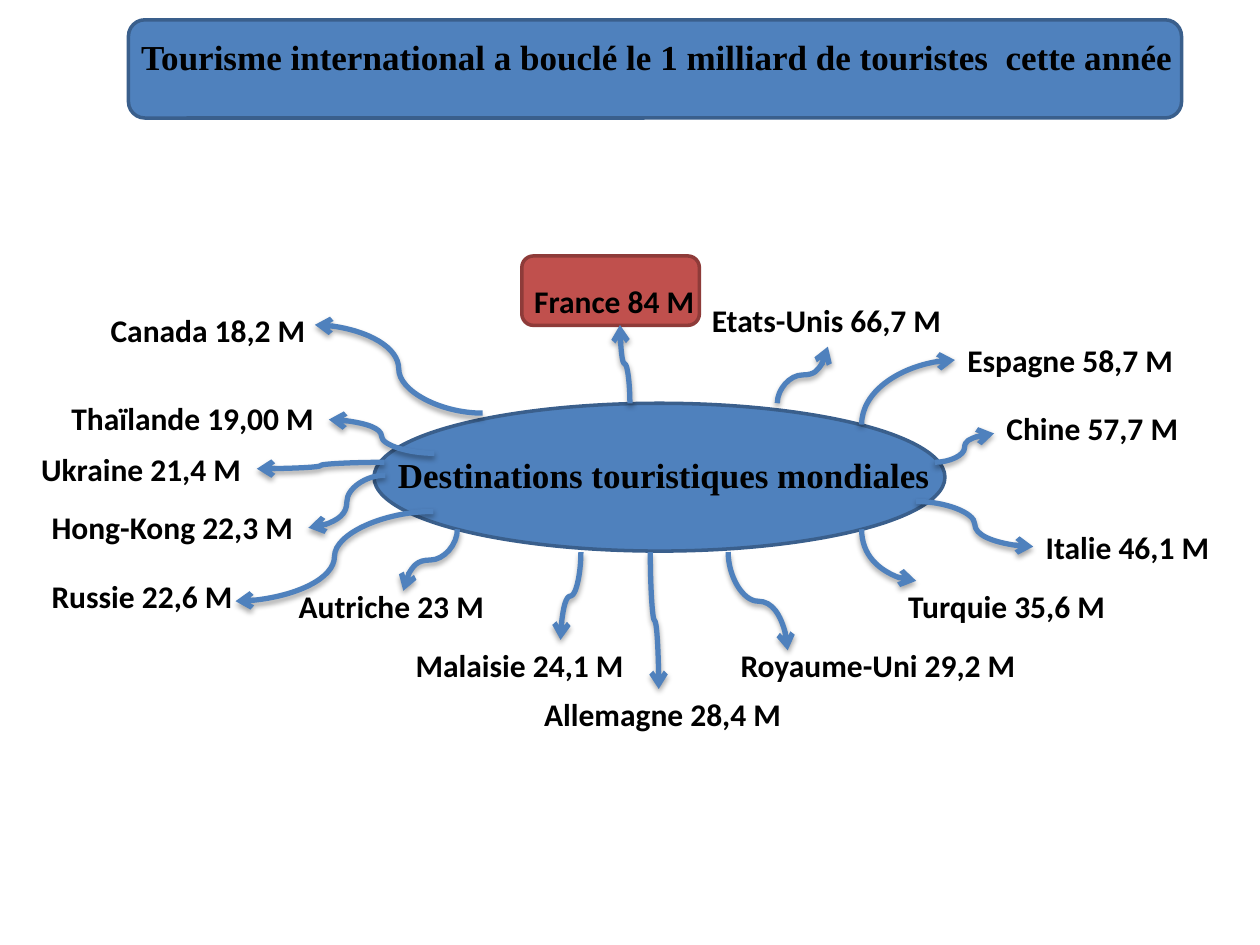
import lxml.etree
import pptx
import pptx.dml.color
import pptx.enum.shapes
import pptx.enum.text
import pptx.oxml
import pptx.oxml.ns
import pptx.util

Cm = pptx.util.Cm
Pt = pptx.util.Pt
qn = pptx.oxml.ns.qn
shape_kinds = pptx.enum.shapes.MSO_SHAPE
colours = {
    "blue": "4F81BD",
    "blue edge": "3A5F8C",
    "red": "C0504D",
    "red edge": "8E3B39",
    "text": "000000",
}
shadow_xml = (
    '<a:effectLst xmlns:a="http://schemas.openxmlformats.org/drawingml/2006/main">'
    '<a:outerShdw blurRad="40000" dist="23000" dir="5400000" rotWithShape="0">'
    '<a:srgbClr val="000000"><a:alpha val="35000"/></a:srgbClr>'
    "</a:outerShdw></a:effectLst>"
)


def rgb(name):
    return pptx.dml.color.RGBColor.from_string(colours[name])


def write_text(box, text, font="Calibri", size=18, bold=True, colour="text", wrap=False):
    frame = box.text_frame
    frame.word_wrap = wrap
    frame.auto_size = pptx.enum.text.MSO_AUTO_SIZE.NONE
    frame.vertical_anchor = pptx.enum.text.MSO_ANCHOR.TOP
    para = frame.paragraphs[0]
    para.alignment = pptx.enum.text.PP_ALIGN.LEFT
    span = para.add_run()
    span.text = text
    span.font.name = font
    span.font.size = Pt(size)
    span.font.bold = bold
    span.font.color.rgb = rgb(colour)


deck = pptx.Presentation()
deck.slide_width = Cm(25.4)
deck.slide_height = Cm(19.05)
page = deck.slides.add_slide(deck.slide_layouts[5])

panels = [
    (shape_kinds.ROUNDED_RECTANGLE, "blue", 2.59, 0.4, 21.23, 1.98),
    (shape_kinds.ROUNDED_RECTANGLE, "red", 10.52, 5.16, 3.58, 1.4),
    (shape_kinds.OVAL, "blue", 7.54, 8.13, 11.51, 2.98),
]
for kind, colour, left, top, width, height in panels:
    panel = page.shapes.add_shape(kind, Cm(left), Cm(top), Cm(width), Cm(height))
    panel.shadow.inherit = False
    panel.fill.solid()
    panel.fill.fore_color.rgb = rgb(colour)
    panel.line.color.rgb = rgb(colour + " edge")
    panel.line.width = Pt(2)

title = page.shapes.title
title.left, title.top, title.width, title.height = Cm(2.59), Cm(0.58), Cm(21.44), Cm(1.12)
write_text(
    title,
    "Tourisme international a bouclé le 1 milliard de touristes  cette année",
    font="Times New Roman",
    size=20,
    wrap=True,
)
page.shapes._spTree.append(title._element)

hub = page.shapes.add_textbox(Cm(7.77), Cm(9.02), Cm(11.3), Cm(1.12))
write_text(hub, "Destinations touristiques mondiales", font="Times New Roman", size=20)

destinations = [
    ("France 84 M", (10.52, 5.56, 3.76), "vertical", (12.7, 8.13, 12.5, 6.55)),
    ("Etats-Unis 66,7 M", (14.1, 5.94, 5.18), "vertical", (15.67, 8.13, 16.69, 6.99)),
    ("Espagne 58,7 M", (19.25, 6.76, 4.65), "bend", (17.37, 8.56, 19.25, 7.26)),
    ("Chine 57,7 M", (20.04, 8.13, 3.99), "horizontal", (18.85, 9.32, 20.04, 8.74)),
    ("Italie 46,1 M", (20.83, 10.52, 3.84), "horizontal", (18.47, 10.11, 20.83, 11.02)),
    ("Turquie 35,6 M", (18.06, 11.71, 4.52), "bend", (17.37, 10.67, 18.47, 11.71)),
    ("Royaume-Uni 29,2 M", (14.68, 12.9, 6.1), "vertical", (14.68, 11.13, 15.88, 13.11)),
    ("Allemagne 28,4 M", (10.72, 13.89, 5.33), "vertical", (13.11, 11.13, 13.28, 13.89)),
    ("Malaisie 24,1 M", (8.13, 12.9, 4.75), "vertical", (11.71, 11.13, 11.3, 12.9)),
    ("Autriche 23 M", (5.77, 11.71, 4.29), "vertical", (9.22, 10.67, 8.13, 11.91)),
    ("Russie 22,6 M", (0.79, 11.51, 4.37), "horizontal", (8.74, 10.31, 4.75, 12.12)),
    ("Hong-Kong 22,3 M", (0.79, 10.11, 5.44), "horizontal", (7.77, 9.58, 6.22, 10.64)),
    ("Ukraine 21,4 M", (0.58, 8.94, 4.57), "horizontal", (7.75, 9.32, 5.18, 9.45)),
    ("Thaïlande 19,00 M", (1.19, 7.92, 5.44), "horizontal", (8.76, 9.14, 6.63, 8.46)),
    ("Canada 18,2 M", (1.98, 6.15, 4.47), "horizontal", (9.73, 8.33, 6.35, 6.55)),
]
for text, (left, top, width), route, (x1, y1, x2, y2) in destinations:
    label = page.shapes.add_textbox(Cm(left), Cm(top), Cm(width), Cm(1.03))
    write_text(label, text)

    turned = route != "horizontal"
    if turned:
        middle_x, middle_y = (x1 + x2) / 2, (y1 + y2) / 2
        half_x, half_y = (x2 - x1) / 2, (y2 - y1) / 2
        x1, x2 = middle_x - half_y, middle_x + half_y
        y1, y2 = middle_y + half_x, middle_y - half_x
    arrow = page.shapes.add_connector(
        pptx.enum.shapes.MSO_CONNECTOR.CURVE, Cm(x1), Cm(y1), Cm(x2), Cm(y2)
    )
    arrow.line.color.rgb = rgb("blue")
    arrow.line.width = Pt(3)
    properties = arrow._element.spPr
    if turned:
        properties.find(qn("a:xfrm")).set("rot", "5400000")
    if route == "bend":
        properties.find(qn("a:prstGeom")).set("prst", "curvedConnector2")
    lxml.etree.SubElement(properties.find(qn("a:ln")), qn("a:tailEnd"), type="arrow")
    properties.append(pptx.oxml.parse_xml(shadow_xml))

deck.save("out.pptx")
